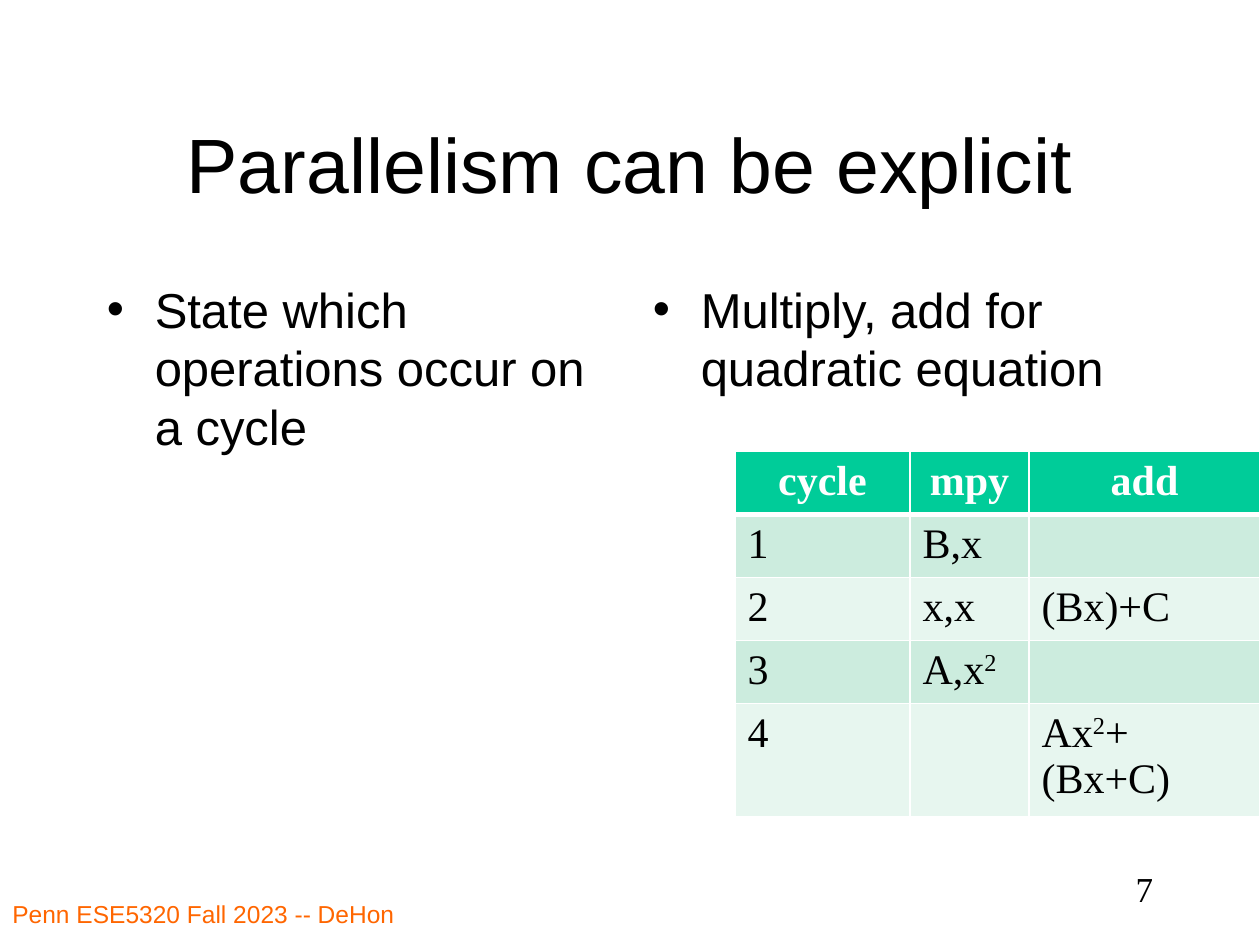
from lxml.etree import SubElement
from pptx import Presentation
from pptx.dml.color import RGBColor
from pptx.enum.text import MSO_ANCHOR, PP_ALIGN as Align
from pptx.oxml.ns import qn
from pptx.util import Inches, Pt

COLORS = {"ink": "000000", "paper": "FFFFFF", "credit": "FF6600",
          "header": "00CC99", "odd": "CCECDE", "even": "E7F6EF"}
UNIT = Inches(1) // 12  # the slide is a grid of 120 columns by 90 rows


def box(*cells):
    """Turn left, top, width and height in grid cells into lengths."""
    return [round(cell * UNIT) for cell in cells]


def write(paragraph, text, size, font="Arial", color="ink", bold=False, raised=False):
    run = paragraph.add_run()
    run.text = text
    run.font.size = Pt(size)
    run.font.name = font
    run.font.bold = bold
    run.font.color.rgb = RGBColor.from_string(COLORS[color])
    if raised:
        run.font._element.set("baseline", "30000")


deck = Presentation()
deck.slide_width, deck.slide_height = 120 * UNIT, 90 * UNIT
slide = deck.slides.add_slide(deck.slide_layouts[5])

# Title
title = slide.shapes.title
title.left, title.top, title.width, title.height = box(9, 8, 102, 15)
title.text_frame.vertical_anchor = MSO_ANCHOR.MIDDLE
heading = title.text_frame.paragraphs[0]
heading.alignment = Align.CENTER
write(heading, "Parallelism can be explicit", 44)

# Two bulleted columns
for left, point in [(9, "State which operations occur on a cycle"),
                    (61, "Multiply, add for quadratic equation")]:
    frame = slide.shapes.add_textbox(*box(left, 26, 50, 54)).text_frame
    frame.word_wrap = True
    bullet = frame.paragraphs[0]
    bullet.space_before = Pt(5.6)
    props = bullet._p.get_or_add_pPr()
    props.set("marL", str(Inches(0.38)))
    props.set("indent", str(-Inches(0.38)))
    SubElement(props, qn("a:buFont"), typeface="Arial")
    SubElement(props, qn("a:buChar"), char="•")
    write(bullet, point, 28)

# Footer and page number
for place, align, text, size, font, color in [
        ((0, 85, 55, 5), Align.LEFT, "Penn ESE5320 Fall 2023 -- DeHon", 14, "Arial", "credit"),
        ((86, 82, 25, 6), Align.RIGHT, "7", 20, "Times New Roman", "ink")]:
    frame = slide.shapes.add_textbox(*box(*place)).text_frame
    frame.word_wrap = True
    frame.paragraphs[0].alignment = align
    write(frame.paragraphs[0], text, size, font, color)

# Schedule: each cell is a list of runs, and every second run is superscript
schedule = [
    [["cycle"], ["mpy"], ["add"]],
    [["1"], ["B,x"], []],
    [["2"], ["x,x"], ["(Bx)+C"]],
    [["3"], ["A,x", "2"], []],
    [["4"], [], ["Ax", "2", "+(Bx+C)"]],
]
table = slide.shapes.add_table(len(schedule), 3, *box(70, 43, 50, 24.4)).table
for column, width in zip(table.columns, box(16.67, 11.33, 22)):
    column.width = width

for r, row in enumerate(schedule):
    is_header = r == 0
    shade = "header" if is_header else "odd" if r % 2 else "even"
    for c, parts in enumerate(row):
        cell = table.cell(r, c)
        for side in "LRTB":
            thick = (side == "B" and r == 0) or (side == "T" and r == 1)
            line = SubElement(cell._tc.get_or_add_tcPr(), qn(f"a:ln{side}"),
                              w=str(Pt(3 if thick else 1)))
            SubElement(SubElement(line, qn("a:solidFill")), qn("a:srgbClr"),
                       val=COLORS["paper"])
        cell.fill.solid()
        cell.fill.fore_color.rgb = RGBColor.from_string(COLORS[shade])
        entry = cell.text_frame.paragraphs[0]
        entry.alignment = Align.CENTER if is_header else Align.LEFT
        for i, part in enumerate(parts):
            write(entry, part, 24, "Times New Roman",
                  "paper" if is_header else "ink", is_header, raised=i % 2 == 1)

deck.save("out.pptx")
